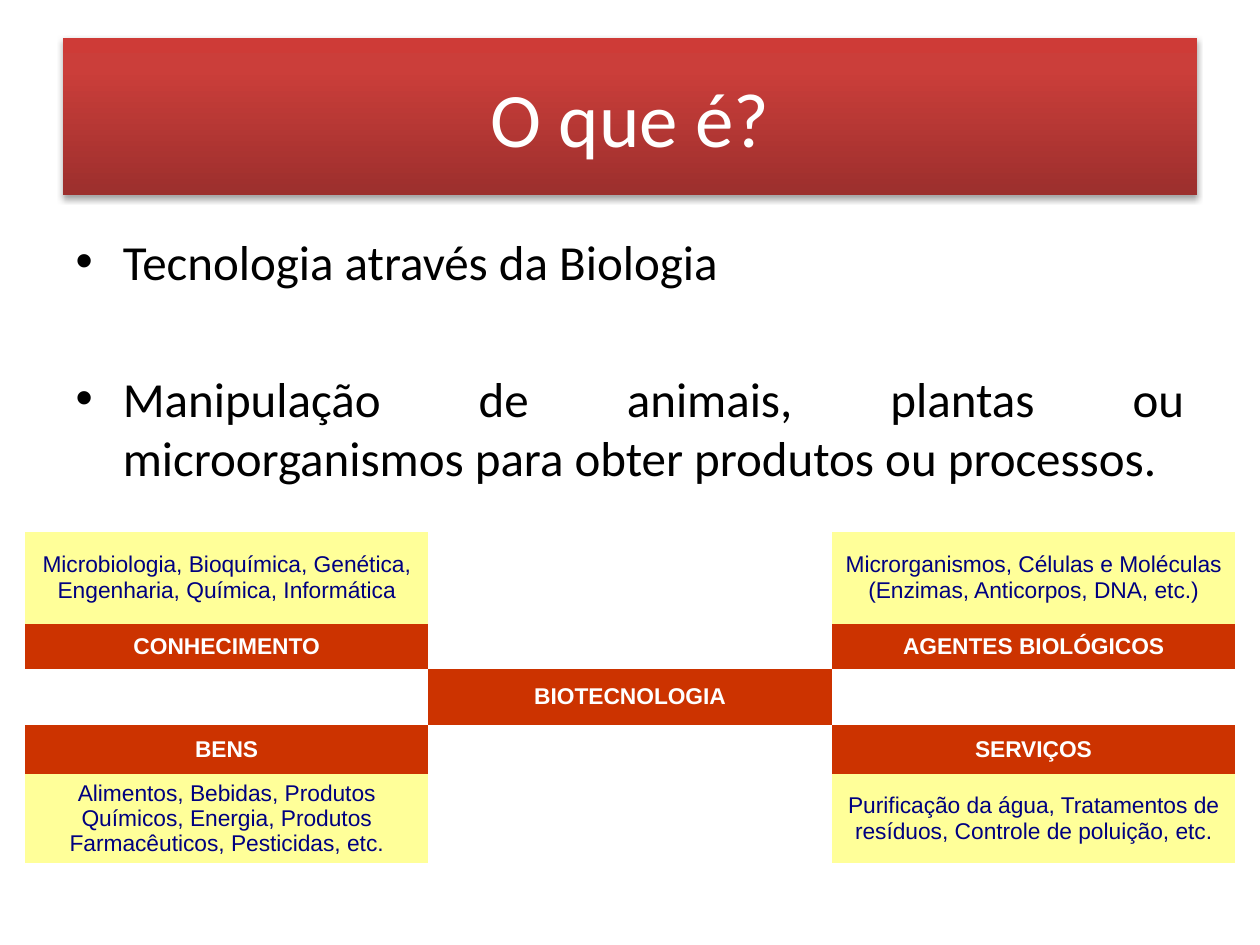
from copy import deepcopy
from dataclasses import dataclass

from pptx import Presentation
from pptx.dml.color import RGBColor
from pptx.enum.text import MSO_ANCHOR, PP_ALIGN
from pptx.oxml import parse_xml
from pptx.oxml.ns import nsdecls, qn
from pptx.util import Cm, Pt


@dataclass(frozen=True)
class Theme:
    """Fonts, type sizes and colours of the slide."""
    text_font: str = "Calibri"
    table_font: str = "Arial"
    title_size: int = 44
    body_size: int = 28
    table_size: int = 13
    white: str = "FFFFFF"
    black: str = "000000"
    navy: str = "000080"
    yellow: str = "FFFF99"
    red: str = "CC3300"
    gradient: tuple = ((0, "9C2F2D"), (0.8, "CB3E3A"), (1, "CE3B37"))


THEME = Theme()
NO_STYLE = "{2D5ABB26-0587-4C30-8999-92F81FD0307C}"
BULLETS = [
    "Tecnologia através da Biologia",
    "Manipulação de animais, plantas ou microorganismos "
    "para obter produtos ou processos.",
]
ROW_HEIGHTS = [1.85, 0.91, 1.14, 0.99, 1.79]
HEADING_ROWS = (1, 2, 3)
ROWS = [
    ["Microbiologia, Bioquímica, Genética, Engenharia, Química, Informática",
     "",
     "Microrganismos, Células e Moléculas (Enzimas, Anticorpos, DNA, etc.)"],
    ["CONHECIMENTO", "", "AGENTES BIOLÓGICOS"],
    ["", "BIOTECNOLOGIA", ""],
    ["BENS", "", "SERVIÇOS"],
    ["Alimentos, Bebidas, Produtos Químicos, Energia, Produtos "
     "Farmacêuticos, Pesticidas, etc.",
     "",
     "Purificação da água, Tratamentos de resíduos, "
     "Controle de poluição, etc."],
]


def place(sp, left, top, width, height):
    """Set position and size in centimetres."""
    sp.left, sp.top = Cm(left), Cm(top)
    sp.width, sp.height = Cm(width), Cm(height)


def style(p, font, size, color, align, bold=False):
    """Format a whole paragraph."""
    p.alignment = align
    p.font.name, p.font.size, p.font.bold = font, Pt(size), bold
    p.font.color.rgb = RGBColor.from_string(color)


def fill_gradient(sp, stops):
    """Fill a shape with a bottom-to-top gradient of three stops."""
    sp.fill.gradient()
    sp.fill.gradient_angle = 90
    gs_list = sp._element.spPr.find(qn("a:gradFill")).find(qn("a:gsLst"))
    gs_list.append(deepcopy(gs_list[-1]))
    for stop, (position, color) in zip(sp.fill.gradient_stops, stops):
        stop.position = position
        stop.color.rgb = RGBColor.from_string(color)


def add_shadow(sp):
    """Give a shape a soft shadow below it."""
    sp._element.spPr.append(parse_xml(
        f'<a:effectLst {nsdecls("a")}>'
        '<a:outerShdw blurRad="40000" dist="23000" dir="5400000" rotWithShape="0">'
        f'<a:srgbClr val="{THEME.black}"><a:alpha val="35000"/></a:srgbClr>'
        '</a:outerShdw></a:effectLst>'))


def set_title(s, text):
    """Write the title on its red band."""
    sp = s.shapes.title
    place(sp, 1.27, 0.76, 22.86, 3.18)
    fill_gradient(sp, THEME.gradient)
    add_shadow(sp)
    tf = sp.text_frame
    tf.text = text
    tf.vertical_anchor = MSO_ANCHOR.MIDDLE
    style(tf.paragraphs[0], THEME.text_font, THEME.title_size, THEME.white,
          PP_ALIGN.CENTER)


def set_body(s, items):
    """Write the justified bullet list."""
    sp = s.placeholders[1]
    place(sp, 1.27, 4.53, 22.86, 7.98)
    tf = sp.text_frame
    for i, text in enumerate(items):
        p = tf.add_paragraph() if i else tf.paragraphs[0]
        p.text = text
        p.space_before = Pt(45 if i else 0)
        style(p, THEME.text_font, THEME.body_size, THEME.black,
              PP_ALIGN.JUSTIFY)


def set_cell(cell, text, heading):
    """Write and colour one cell, leaving empty cells clear."""
    cell.vertical_anchor = MSO_ANCHOR.MIDDLE
    cell.margin_top = cell.margin_bottom = Cm(0.05)
    cell.text = text
    style(cell.text_frame.paragraphs[0], THEME.table_font, THEME.table_size,
          THEME.white if heading else THEME.navy, PP_ALIGN.CENTER, heading)
    if text:
        cell.fill.solid()
        color = THEME.red if heading else THEME.yellow
        cell.fill.fore_color.rgb = RGBColor.from_string(color)
    else:
        cell.fill.background()


def add_scheme(s):
    """Add the table that relates biotechnology to its fields."""
    frame = s.shapes.add_table(len(ROWS), len(ROWS[0]), Cm(0.5), Cm(10.72),
                               Cm(24.4), Cm(sum(ROW_HEIGHTS)))
    table = frame.table
    table.first_row = table.horz_banding = False
    table._tbl.tblPr.find(qn("a:tableStyleId")).text = NO_STYLE
    for i, (height, texts) in enumerate(zip(ROW_HEIGHTS, ROWS)):
        table.rows[i].height = Cm(height)
        for j, text in enumerate(texts):
            set_cell(table.cell(i, j), text, i in HEADING_ROWS)


def main():
    """Build and save the slide."""
    prs = Presentation()
    prs.slide_width, prs.slide_height = Cm(25.4), Cm(19.05)
    s = prs.slides.add_slide(prs.slide_layouts[1])
    set_title(s, "O que é?")
    set_body(s, BULLETS)
    add_scheme(s)
    prs.save("out.pptx")


if __name__ == "__main__":
    main()
